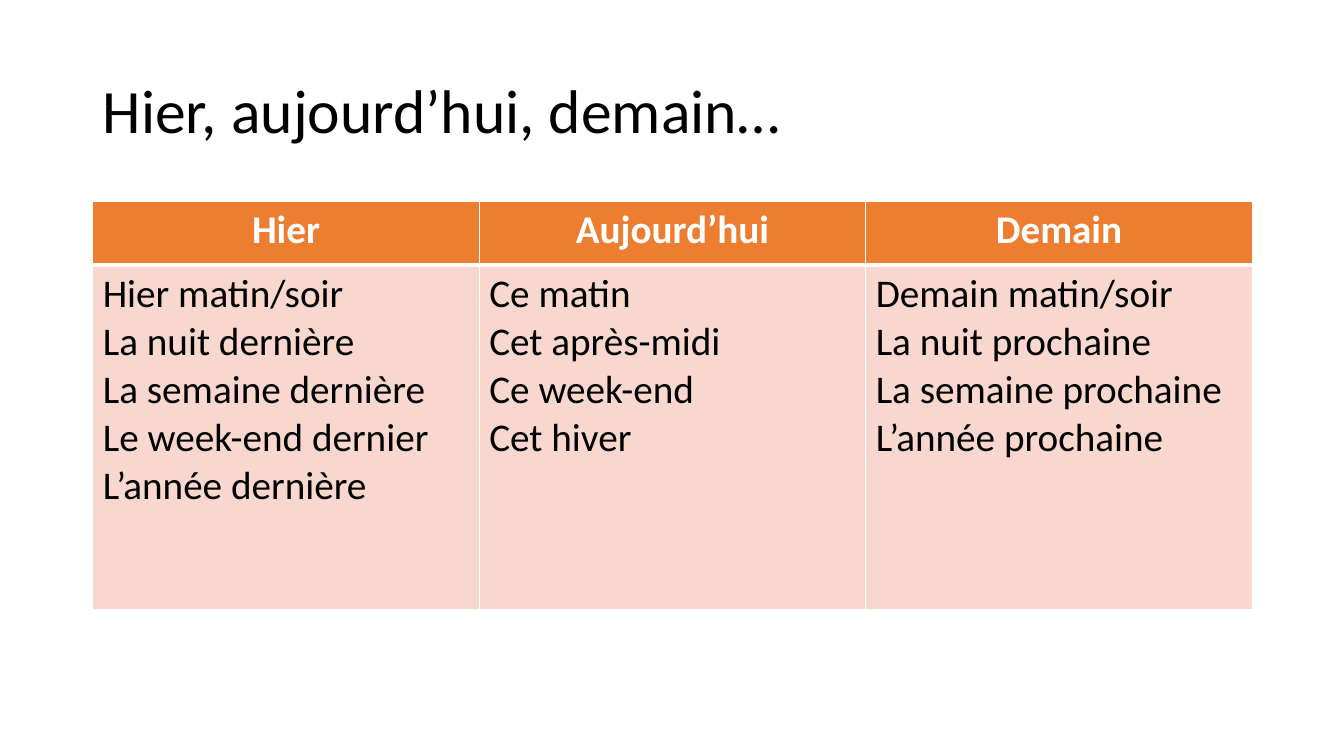
from dataclasses import dataclass

from lxml import etree
from pptx import Presentation
from pptx import util as u
from pptx.dml import color
from pptx.enum import text
from pptx.oxml import ns

SCALE = 9144


@dataclass(frozen=True)
class Theme:
    face: str = "Calibri"
    ink: str = "000000"
    white: str = "FFFFFF"
    head: str = "ED7D31"
    body: str = "F8D7CE"
    big: int = 44
    small: int = 28
    thin: int = 1
    thick: int = 3


@dataclass(frozen=True)
class Column:
    head: str
    lines: tuple[str, ...]


THEME = Theme()
TITLE = "Hier, aujourd’hui, demain…"
COLUMNS = (
    Column("Hier", ("Hier matin/soir", "La nuit dernière", "La semaine dernière",
                    "Le week-end dernier", "L’année dernière")),
    Column("Aujourd’hui", ("Ce matin", "Cet après-midi", "Ce week-end", "Cet hiver")),
    Column("Demain", ("Demain matin/soir", "La nuit prochaine",
                      "La semaine prochaine", "L’année prochaine")),
)


def px(count: int) -> int:
    return u.Emu(count * SCALE)


def style(frame, size: int, tint: str, bold: bool = False) -> None:
    for para in frame.paragraphs:
        for run in para.runs:
            run.font.name = THEME.face
            run.font.size = u.Pt(size)
            run.font.bold = bold
            run.font.color.rgb = color.RGBColor.from_string(tint)


def border(cell, side: str, width: int) -> None:
    props = cell._tc.get_or_add_tcPr()
    line = etree.SubElement(props, ns.qn(f"a:ln{side}"), w=str(u.Pt(width)))
    fill = etree.SubElement(line, ns.qn("a:solidFill"))
    etree.SubElement(fill, ns.qn("a:srgbClr"), val=THEME.white)


def draw_cell(cell, lines: tuple[str, ...], header: bool) -> None:
    cell.text_frame.text = "\n".join(lines)
    style(cell.text_frame, THEME.small, THEME.white if header else THEME.ink, header)
    if header:
        cell.text_frame.paragraphs[0].alignment = text.PP_ALIGN.CENTER
    shared = "B" if header else "T"
    for side in "LRTB":
        border(cell, side, THEME.thick if side == shared else THEME.thin)
    cell.fill.solid()
    cell.fill.fore_color.rgb = color.RGBColor.from_string(
        THEME.head if header else THEME.body)


def draw_title(slide) -> None:
    box = slide.shapes.add_textbox(px(92), px(40), px(1150), px(145))
    frame = box.text_frame
    frame.word_wrap = True
    frame.vertical_anchor = text.MSO_ANCHOR.MIDDLE
    frame.text = TITLE
    frame.paragraphs[0].line_spacing = 0.9
    style(frame, THEME.big, THEME.ink)


def draw_table(slide) -> None:
    table = slide.shapes.add_table(
        2, len(COLUMNS), px(92), px(200), px(1150), px(405)).table
    table.horz_banding = False
    for row, height in zip(table.rows, (63, 342)):
        row.height = px(height)
    for index, column in enumerate(COLUMNS):
        draw_cell(table.cell(0, index), (column.head,), True)
        draw_cell(table.cell(1, index), column.lines, False)


def main() -> None:
    deck = Presentation()
    deck.slide_width, deck.slide_height = px(1333), px(750)
    slide = deck.slides.add_slide(deck.slide_layouts[6])
    draw_title(slide)
    draw_table(slide)
    deck.save("out.pptx")


if __name__ == "__main__":
    main()
